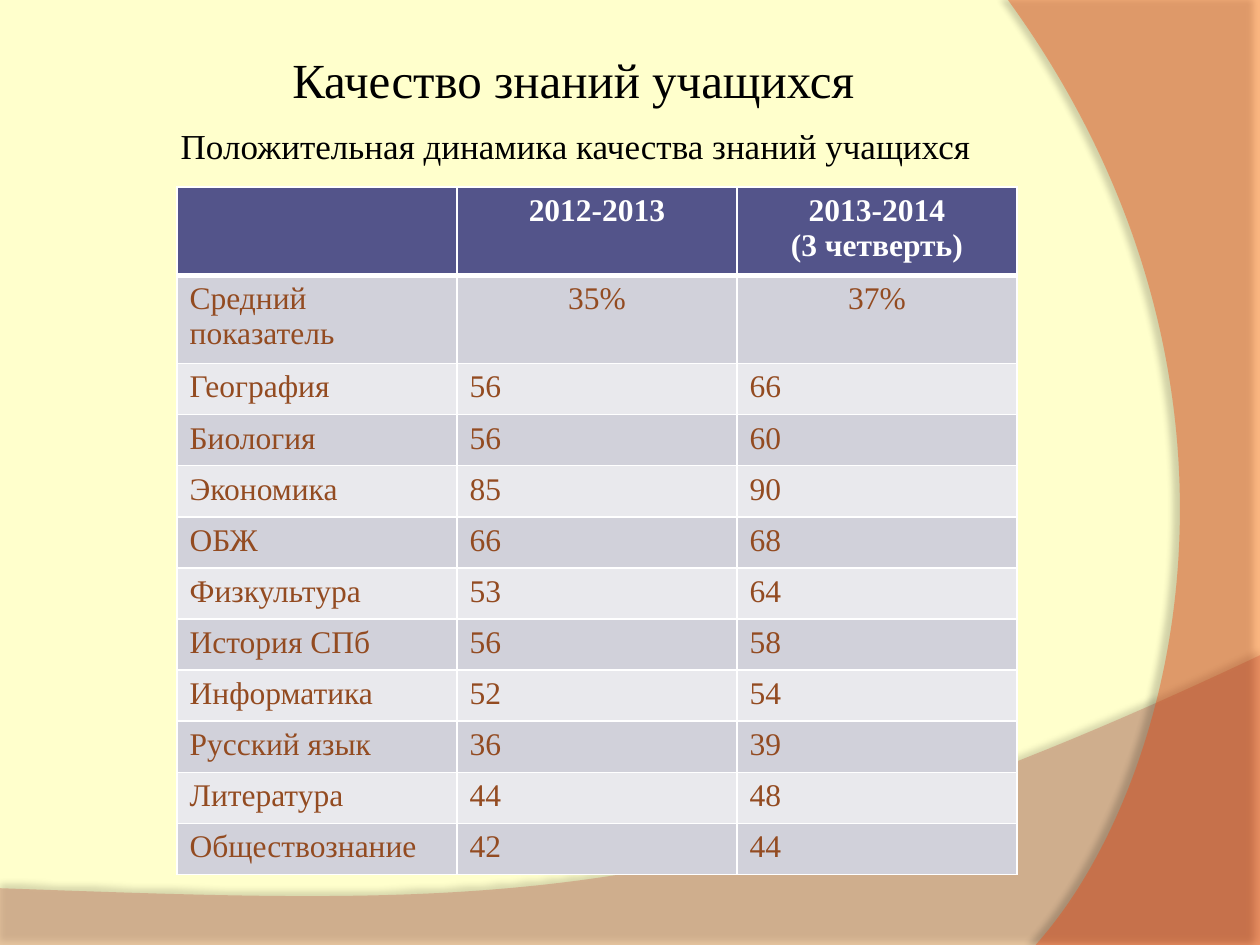
import pptx
import pptx.util
import pptx.dml.color
import pptx.enum.text
import pptx.oxml
import pptx.oxml.ns
from dataclasses import dataclass

Cm, Pt = pptx.util.Cm, pptx.util.Pt
ALIGN = pptx.enum.text.PP_ALIGN
ANCHOR = pptx.enum.text.MSO_ANCHOR
NS = pptx.oxml.ns.nsdecls("a")


@dataclass(frozen=True)
class Theme:
    font: str = "Times New Roman"
    back: str = "FFFFCC"
    wave: str = "C77E69"
    arc: str = "F4480F"
    ink: str = "000000"
    white: str = "FFFFFF"
    head: str = "53548A"
    bands: tuple = ("D1D1DA", "E9E9ED")
    brown: str = "934B21"
    title: int = 28
    lead: int = 20
    cell: int = 18


LOOK = Theme()
HEADS = ("", "2012-2013", "2013-2014\n(3 четверть)")
ROWS = (
    ("Средний показатель", "35%", "37%"),
    ("География", "56", "66"),
    ("Биология", "56", "60"),
    ("Экономика", "85", "90"),
    ("ОБЖ", "66", "68"),
    ("Физкультура", "53", "64"),
    ("История СПб", "56", "58"),
    ("Информатика", "52", "54"),
    ("Русский язык", "36", "39"),
    ("Литература", "44", "48"),
    ("Обществознание", "42", "44"),
)


def rgb(code):
    return pptx.dml.color.RGBColor.from_string(code)


def apply(thing, **form):
    for name, value in form.items():
        setattr(thing, name, value)


def paint(thing, color):
    thing.fill.solid()
    thing.fill.fore_color.rgb = rgb(color)


def write(frame, text, size, color, bold=False, align=ALIGN.CENTER):
    frame.text = text
    for para in frame.paragraphs:
        para.alignment = align
        for run in para.runs:
            apply(run.font, name=LOOK.font, size=Pt(size), bold=bold)
            run.font.color.rgb = rgb(color)


def sweep(slide, box, edge, curve, color, alpha, shade):
    """Draw a translucent shape: straight edges, then a curve to the start.

    Points are fractions of the box."""
    left, top, width, height = box
    points = [(Cm(left + x * width), Cm(top + y * height)) for x, y in edge]
    pen = slide.shapes.build_freeform(*points[0])
    pen.add_line_segments(points[1:], close=True)
    shape = pen.convert_to_shape()
    knots = "".join(f'<a:pt x="{Cm(x * width)}" y="{Cm(y * height)}"/>'
                    for x, y in curve + (edge[0],))
    close = shape._element.find(".//" + pptx.oxml.ns.qn("a:close"))
    close.addprevious(pptx.oxml.parse_xml(
        f'<a:cubicBezTo {NS}>{knots}</a:cubicBezTo>'))
    paint(shape, color)
    shape.line.fill.background()
    tint = shape.fill._xPr.find(".//" + pptx.oxml.ns.qn("a:srgbClr"))
    tint.append(pptx.oxml.parse_xml(f'<a:alpha {NS} val="{alpha * 1000}"/>'))
    dark, blur, gap, turn = shade
    shape._element.spPr.append(pptx.oxml.parse_xml(
        f'<a:effectLst {NS}><a:outerShdw blurRad="{Pt(blur)}" dist="{Pt(gap)}" '
        f'dir="{turn * 60000}" algn="ctr" rotWithShape="0">'
        f'<a:srgbClr val="{LOOK.ink}"><a:alpha val="{dark * 1000}"/></a:srgbClr>'
        '</a:outerShdw></a:effectLst>'))


def backdrop(slide, width, height):
    paint(slide.background, LOOK.back)
    sweep(slide, (0, 13.21, width, 5.87), [(1, 0), (1, 1), (0, 1), (0, 0.8)],
          ((0.39, 0.86), (0.56, 0.9)), LOOK.wave, 45, (35, 4, 3.5, 270))
    sweep(slide, (20.32, 0, 5.08, height), [(0, 0), (1, 0), (1, 1), (0.11, 1)],
          ((0.68, 0.83), (1.09, 0.4)), LOOK.arc, 40, (45, 4, 4, 180))


def caption(slide, box, text, size, anchor, before=0):
    frame = slide.shapes.add_textbox(*map(Cm, box)).text_frame
    apply(frame, word_wrap=True, vertical_anchor=anchor)
    write(frame, text, size, LOOK.ink)
    frame.paragraphs[0].space_before = Pt(before)


def border(cell, under=1):
    props = cell._tc.get_or_add_tcPr()
    for spot, (side, wide) in enumerate(zip("LRTB", (1, 1, 1, under))):
        props.insert(spot, pptx.oxml.parse_xml(
            f'<a:ln{side} {NS} w="{Pt(wide)}"><a:solidFill>'
            f'<a:srgbClr val="{LOOK.white}"/></a:solidFill></a:ln{side}>'))


def scores(slide, box):
    """Place the marks table; rows with two lines of text grow by themselves."""
    grid = slide.shapes.add_table(
        len(ROWS) + 1, len(HEADS), *map(Cm, box)).table
    for at, texts in enumerate((HEADS,) + ROWS):
        head = at == 0
        for col, text in enumerate(texts):
            cell = grid.cell(at, col)
            paint(cell, LOOK.head if head else LOOK.bands[(at - 1) % 2])
            border(cell, 3 if head else 1)
            mid = head or (at == 1 and col > 0)
            write(cell.text_frame, text, LOOK.cell,
                  LOOK.white if head else LOOK.brown, head,
                  ALIGN.CENTER if mid else ALIGN.LEFT)


def main():
    deck = pptx.Presentation()
    width, height = 25.4, 19.05
    apply(deck, slide_width=Cm(width), slide_height=Cm(height))
    slide = deck.slides.add_slide(deck.slide_layouts[6])
    backdrop(slide, width, height)
    caption(slide, (1.18, 0, 20.75, 3.18), "Качество знаний учащихся",
            LOOK.title, ANCHOR.MIDDLE)
    caption(slide, (1.23, 2.39, 20.75, 1.3),
            "Положительная динамика качества знаний учащихся",
            LOOK.lead, ANCHOR.TOP, before=4)
    scores(slide, (3.57, 3.77, 16.93, 12.36))
    deck.save("out.pptx")


if __name__ == "__main__":
    main()
